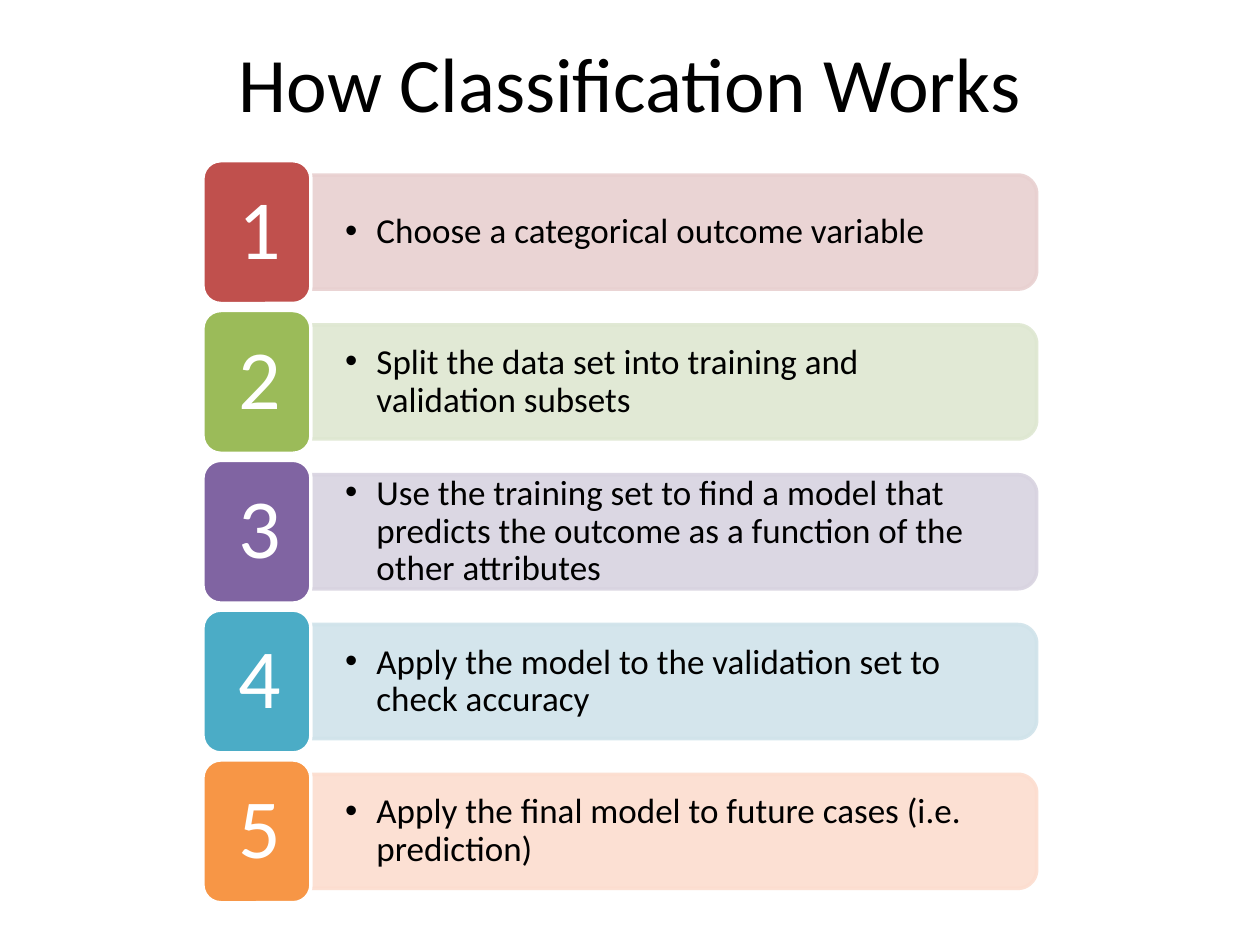
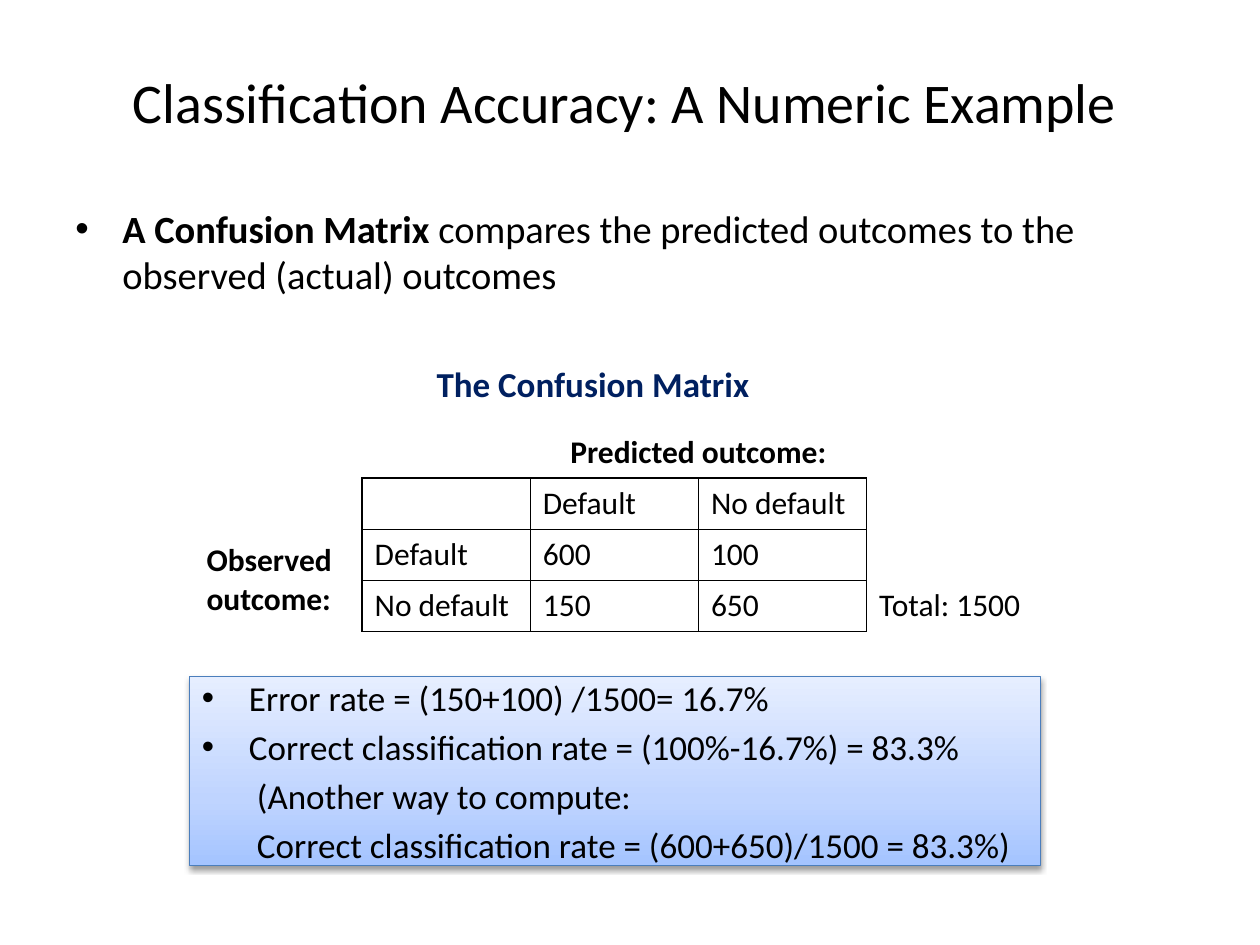
from copy import deepcopy
from math import cos, pi, sin

from lxml.etree import SubElement
from pptx import Presentation
from pptx.dml.color import RGBColor
from pptx.enum.shapes import MSO_SHAPE
from pptx.enum.text import MSO_ANCHOR, PP_ALIGN
from pptx.oxml.ns import qn
from pptx.util import Cm, Pt

FONT = "Calibri"
BLACK, WHITE, NAVY = "000000", "FFFFFF", "002060"
TITLE_ONLY = 5

# Step text, tile colour, band colour
STEPS = [
    ("Choose a categorical outcome variable", "C0504D", "E8D0D0"),
    ("Split the data set into training and validation subsets", "9BBB59", "DEE7D1"),
    ("Use the training set to find a model that predicts the outcome "
     "as a function of the other attributes", "8064A2", "D8D3E0"),
    ("Apply the model to the validation set to check accuracy", "4BACC6", "D0E3EA"),
    ("Apply the final model to future cases (i.e. prediction)", "F79646", "FCDDCF"),
]
STEP_PITCH = 3.02
TILE_LEFT, TILE_TOP, TILE_WIDTH, TILE_HEIGHT = 4.09, 3.24, 2.18, 2.88
BAND_WIDTH, BAND_HEIGHT, BAND_RADIUS = 14.63, 2.3, 0.38

MATRIX = [
    ["", "", "Predicted outcome:", "", ""],
    ["", "", "Default", "No default", ""],
    ["Observed outcome:", "Default", "600", "100", ""],
    ["", "No default", "150", "650", "Total: 1500"],
]
MATRIX_COLUMN, MATRIX_ROW = 3.39, 1.03

RATES_GRADIENT = [(0, "A4C4FF"), (0.35, "BFD4FF"), (1, "E6EEFF")]
# Text, left margin, first-line indent, bulleted
RATES = [
    ("Error rate = (150+100) /1500= 16.7%", 0.95, -0.95, True),
    ("Correct classification rate = (100%-16.7%) = 83.3%", 0.95, -0.95, True),
    ("(Another way to compute:", 1.11, 0, False),
    ("Correct classification rate = (600+650)/1500 = 83.3%)", 1.11, 0, False),
]


def rgb(hex_colour):
    return RGBColor.from_string(hex_colour)


def box(left, top, width, height):
    return Cm(left), Cm(top), Cm(width), Cm(height)


def indent(paragraph, margin, first_line, bullet=False):
    properties = paragraph._p.get_or_add_pPr()
    properties.set("marL", str(Cm(margin)))
    properties.set("indent", str(Cm(first_line)))
    if bullet:
        SubElement(properties, qn("a:buFont"), typeface="Arial")
        SubElement(properties, qn("a:buChar"), char="•")


def style(paragraph, size, colour=BLACK, bold=False, align=PP_ALIGN.LEFT):
    paragraph.alignment = align
    font = paragraph.font
    font.name, font.size, font.bold = FONT, Pt(size), bold
    font.color.rgb = rgb(colour)


def set_insets(frame, left, top, right, bottom):
    frame.margin_left, frame.margin_top = Cm(left), Cm(top)
    frame.margin_right, frame.margin_bottom = Cm(right), Cm(bottom)


def add_titled_slide(deck, text, size, place):
    slide = deck.slides.add_slide(deck.slide_layouts[TITLE_ONLY])
    title = slide.shapes.title
    title.left, title.top, title.width, title.height = box(*place)
    title.text_frame.text = text
    title.text_frame.vertical_anchor = MSO_ANCHOR.MIDDLE
    style(title.text_frame.paragraphs[0], size, align=PP_ALIGN.CENTER)
    return slide


def add_text_box(slide, place, wrap=True):
    frame = slide.shapes.add_textbox(*box(*place)).text_frame
    frame.word_wrap = wrap
    return frame


def paint(shape, fill, line, line_width=2):
    shape.shadow.inherit = False
    shape.fill.solid()
    shape.fill.fore_color.rgb = rgb(fill)
    shape.line.color.rgb = rgb(line)
    shape.line.width = Pt(line_width)


def add_band(slide, top, text, colour):
    """Draw a band with square left corners and rounded right corners."""
    left = TILE_LEFT + TILE_WIDTH
    right, bottom = left + BAND_WIDTH, top + BAND_HEIGHT
    corner_x = right - BAND_RADIUS
    outline = [(left, top)]
    for centre_y, start in ((top + BAND_RADIUS, -pi / 2), (bottom - BAND_RADIUS, 0)):
        for step in range(13):
            angle = start + step * pi / 24
            outline.append((corner_x + BAND_RADIUS * cos(angle),
                            centre_y + BAND_RADIUS * sin(angle)))
    outline.append((left, bottom))
    points = [(Cm(x), Cm(y)) for x, y in outline]
    builder = slide.shapes.build_freeform(*points[0])
    builder.add_line_segments(points[1:])
    band = builder.convert_to_shape()
    paint(band, colour, colour)
    for solid_colour in band._element.spPr.iter(qn("a:srgbClr")):
        SubElement(solid_colour, qn("a:alpha"), val="90000")
    frame = band.text_frame
    frame.word_wrap = True
    frame.vertical_anchor = MSO_ANCHOR.MIDDLE
    set_insets(frame, 0.69, 0.46, 0.81, 0.46)
    frame.text = text
    step_text = frame.paragraphs[0]
    indent(step_text, 0.63, -0.63, bullet=True)
    style(step_text, 20)
    step_text.line_spacing = 0.9


def add_number_tile(slide, top, number, colour):
    tile = slide.shapes.add_shape(
        MSO_SHAPE.ROUNDED_RECTANGLE, *box(TILE_LEFT, top, TILE_WIDTH, TILE_HEIGHT))
    paint(tile, colour, WHITE)
    frame = tile.text_frame
    frame.vertical_anchor = MSO_ANCHOR.MIDDLE
    set_insets(frame, 0.61, 0.36, 0.61, 0.36)
    frame.text = str(number)
    style(frame.paragraphs[0], 48, WHITE, align=PP_ALIGN.CENTER)
    frame.paragraphs[0].line_spacing = 0.9


def in_grid(row, column):
    return 1 <= row <= 3 and 1 <= column <= 3


def set_borders(cell, row, column):
    """Rule every edge that touches the inner 3 by 3 grid; clear the others."""
    properties = cell._tc.get_or_add_tcPr()
    for tag, down, across in (("lnL", 0, -1), ("lnR", 0, 1),
                              ("lnT", -1, 0), ("lnB", 1, 0)):
        edge = SubElement(properties, qn(f"a:{tag}"), w=str(Pt(1)))
        if in_grid(row, column) or in_grid(row + down, column + across):
            fill = SubElement(edge, qn("a:solidFill"))
            SubElement(fill, qn("a:srgbClr"), val=BLACK)
        else:
            SubElement(edge, qn("a:noFill"))


def add_confusion_matrix(slide):
    rows, columns = len(MATRIX), len(MATRIX[0])
    table = slide.shapes.add_table(
        rows, columns,
        *box(3.91, 8.61, columns * MATRIX_COLUMN, rows * MATRIX_ROW)).table
    table.first_row = table.horz_banding = False
    for column in table.columns:
        column.width = Cm(MATRIX_COLUMN)
    for row in table.rows:
        row.height = Cm(MATRIX_ROW)
    table.cell(0, 2).merge(table.cell(0, 3))
    table.cell(2, 0).merge(table.cell(3, 0))
    for r, values in enumerate(MATRIX):
        for c, value in enumerate(values):
            cell = table.cell(r, c)
            set_borders(cell, r, c)
            cell.fill.background()
            cell.text = value
            style(cell.text_frame.paragraphs[0], 18, bold=value.endswith(":"),
                  align=PP_ALIGN.CENTER if r == 0 else PP_ALIGN.LEFT)
    table.cell(2, 0).vertical_anchor = MSO_ANCHOR.MIDDLE


def add_drop_shadow(shape):
    shape.shadow.inherit = False
    effects = shape._element.spPr.find(qn("a:effectLst"))
    shadow = SubElement(effects, qn("a:outerShdw"), blurRad=str(Pt(3.1)),
                        dist=str(Pt(1.6)), dir="5400000", rotWithShape="0")
    colour = SubElement(shadow, qn("a:srgbClr"), val=BLACK)
    SubElement(colour, qn("a:alpha"), val="38000")


def fill_gradient(shape, stops, angle):
    shape.fill.gradient()
    shape.fill.gradient_angle = angle
    stop_list = shape._element.spPr.find(".//" + qn("a:gsLst"))
    while len(stop_list) < len(stops):
        stop_list.append(deepcopy(stop_list[0]))
    for stop, (position, colour) in zip(shape.fill.gradient_stops, stops):
        stop.position = position
        stop.color.rgb = rgb(colour)


def add_rates_panel(slide):
    panel = slide.shapes.add_shape(MSO_SHAPE.RECTANGLE, *box(3.82, 13.64, 17.15, 3.81))
    fill_gradient(panel, RATES_GRADIENT, 90)
    panel.line.color.rgb = rgb("4B7EBC")
    panel.line.width = Pt(0.75)
    add_drop_shadow(panel)
    frame = panel.text_frame
    frame.word_wrap = True
    frame.vertical_anchor = MSO_ANCHOR.MIDDLE
    frame.text = "\n".join(text for text, *_ in RATES)
    for rate, (_, margin, first_line, bullet) in zip(frame.paragraphs, RATES):
        indent(rate, margin, first_line, bullet)
        style(rate, 20)
        rate.space_before = Pt(4)


def add_matrix_heading(slide):
    frame = add_text_box(slide, (8.26, 7.19, 7.24, 1.12), wrap=False)
    frame.text = "The Confusion Matrix"
    heading = frame.paragraphs[0]
    indent(heading, 0.15, 0)
    style(heading, 20, NAVY, bold=True, align=PP_ALIGN.CENTER)


def add_definition(slide):
    definition = add_text_box(slide, (1.27, 4.01, 23.5, 6.45)).paragraphs[0]
    indent(definition, 0.95, -0.95, bullet=True)
    style(definition, 22)
    definition.space_before = Pt(4.4)
    term = definition.add_run()
    term.text = "A Confusion Matrix "
    term.font.bold = True
    definition.add_run().text = ("compares the predicted outcomes to the "
                                 "observed (actual) outcomes")


def build_steps_slide(deck):
    slide = add_titled_slide(deck, "How Classification Works", 44,
                             (1.27, 0.05, 22.86, 3.18))
    for index, (text, tile_colour, band_colour) in enumerate(STEPS):
        top = TILE_TOP + index * STEP_PITCH
        add_band(slide, top + (TILE_HEIGHT - BAND_HEIGHT) / 2, text, band_colour)
        add_number_tile(slide, top, index + 1, tile_colour)


def build_accuracy_slide(deck):
    slide = add_titled_slide(deck, "Classification Accuracy: A Numeric Example", 32,
                             (0, 1.32, 25.2, 1.45))
    add_confusion_matrix(slide)
    add_rates_panel(slide)
    add_matrix_heading(slide)
    add_definition(slide)


def main():
    deck = Presentation()
    deck.slide_width, deck.slide_height = Cm(25.4), Cm(19.05)
    build_steps_slide(deck)
    build_accuracy_slide(deck)
    deck.save("out.pptx")


if __name__ == "__main__":
    main()
